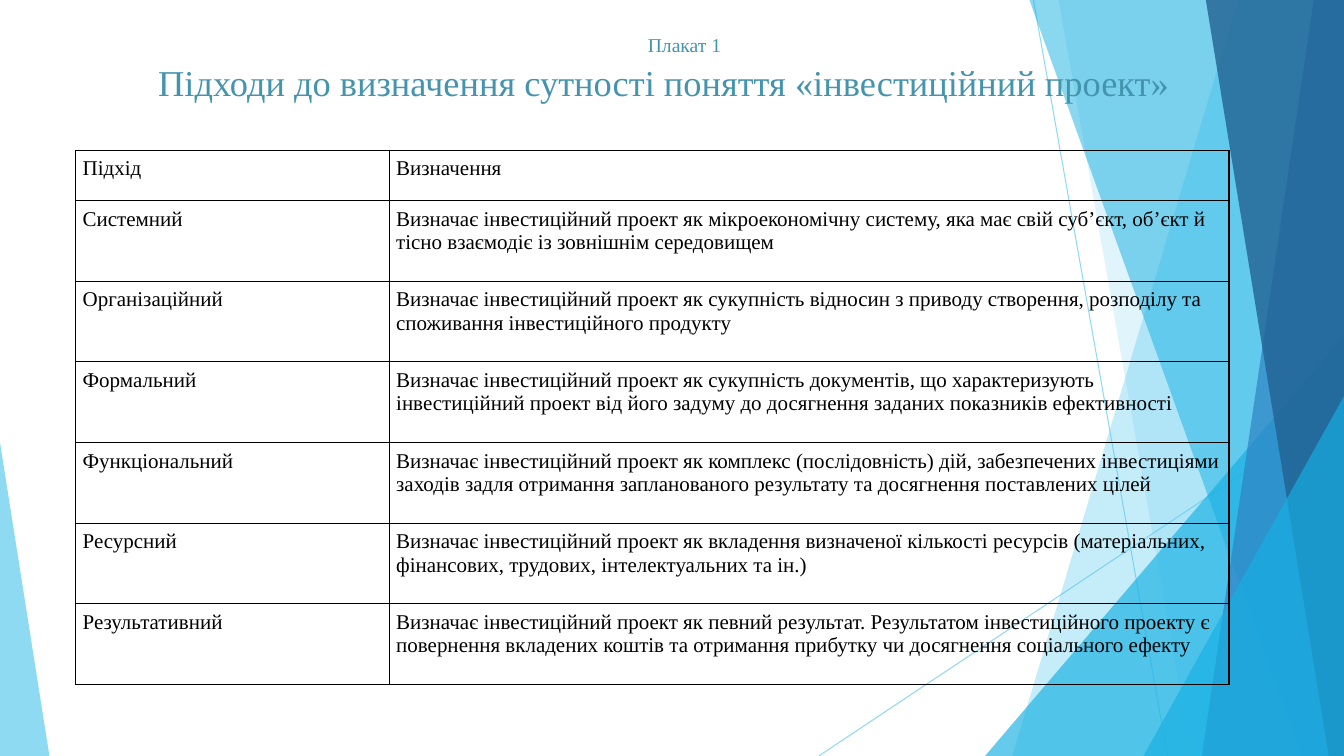
from dataclasses import dataclass

from lxml import etree
from pptx import Presentation
from pptx import util as u
from pptx.dml.color import RGBColor
from pptx.enum import shapes as kinds, text
from pptx.oxml.ns import qn

PX = 9144  # EMU in one px, 100 px to the inch
WIDTH, HEIGHT = 1333, 750
FONT = "Times New Roman"

BLACK = RGBColor(0x00, 0x00, 0x00)
TEAL = RGBColor(0x45, 0x94, 0xAE)
SKY = RGBColor(0x5F, 0xCB, 0xEF)
CYAN = RGBColor(0x16, 0xB0, 0xE3)
BLUE = RGBColor(0x2E, 0x83, 0xC3)
NAVY = RGBColor(0x22, 0x62, 0x92)


@dataclass(frozen=True)
class Ray:
    start: tuple[int, int]
    end: tuple[int, int]


@dataclass(frozen=True)
class Band:
    """Strip from a slanted left edge to the right edge of the slide."""
    top_x: int
    bottom_x: int
    color: RGBColor
    opacity: int


@dataclass(frozen=True)
class Corner:
    """Right triangle standing on the bottom edge of the slide."""
    left: int
    top: int
    right: int
    apex: int
    color: RGBColor
    opacity: int


@dataclass(frozen=True)
class Approach:
    name: str
    definition: str


RAYS = [Ray((1025, 0), (1158, HEIGHT)), Ray((WIDTH, 403), (812, HEIGHT))]

FACETS = [
    Band(1228, 1004, SKY, 36),
    Band(1050, 1182, SKY, 20),
    Corner(977, 333, WIDTH, 1, CYAN, 66),
    Band(1021, 1291, CYAN, 50),
    Band(1303, 1192, BLUE, 70),
    Band(1196, 1318, NAVY, 80),
    Corner(1134, 393, WIDTH, 1, CYAN, 66),
    Corner(0, 439, 49, 0, SKY, 70),
]

APPROACHES = [
    Approach("Підхід", "Визначення"),
    Approach("Системний", "Визначає інвестиційний проект як мікроекономічну систему, яка має "
             "свій суб’єкт, об’єкт й тісно взаємодіє із зовнішнім середовищем"),
    Approach("Організаційний", "Визначає інвестиційний проект як сукупність відносин з приводу "
             "створення, розподілу та споживання інвестиційного продукту"),
    Approach("Формальний", "Визначає інвестиційний проект як сукупність документів, що "
             "характеризують інвестиційний проект від його задуму до досягнення заданих "
             "показників ефективності"),
    Approach("Функціональний", "Визначає інвестиційний проект як комплекс (послідовність) дій, "
             "забезпечених інвестиціями заходів задля отримання запланованого результату та "
             "досягнення поставлених цілей"),
    Approach("Ресурсний", "Визначає інвестиційний проект як вкладення визначеної кількості "
             "ресурсів (матеріальних, фінансових, трудових, інтелектуальних та ін.)"),
    Approach("Результативний", "Визначає інвестиційний проект як певний результат. Результатом "
             "інвестиційного проекту є повернення вкладених коштів та отримання прибутку чи "
             "досягнення соціального ефекту"),
]


def px(length: int) -> u.Emu:
    return u.Emu(length * PX)


def set_opacity(shape, percent: int) -> None:
    for color in shape._element.spPr.iter(qn("a:srgbClr")):
        etree.SubElement(color, qn("a:alpha"), val=str(percent * 1000))


def draw_ray(slide, ray: Ray) -> None:
    line = slide.shapes.add_connector(
        kinds.MSO_CONNECTOR.STRAIGHT, *map(px, ray.start + ray.end))
    line.line.color.rgb = SKY
    line.line.width = u.Pt(0.75)
    set_opacity(line, 70)
    etree.SubElement(line._element.spPr, qn("a:effectLst"))


def draw_facet(slide, facet: Band | Corner) -> None:
    if isinstance(facet, Band):
        outline = slide.shapes.build_freeform(facet.top_x, 0, scale=PX)
        outline.add_line_segments(
            [(WIDTH, 0), (WIDTH, HEIGHT), (facet.bottom_x, HEIGHT)], close=True)
        shape = outline.convert_to_shape()
    else:
        shape = slide.shapes.add_shape(
            kinds.MSO_SHAPE.ISOSCELES_TRIANGLE, px(facet.left), px(facet.top),
            px(facet.right - facet.left), px(HEIGHT - facet.top))
        shape.adjustments[0] = facet.apex
    shape.shadow.inherit = False
    shape.fill.solid()
    shape.fill.fore_color.rgb = facet.color
    shape.line.fill.background()
    set_opacity(shape, facet.opacity)


def write_title(slide) -> None:
    title = slide.shapes.title
    slide.shapes._spTree.append(title._element)  # bring above the facets
    title.left, title.top, title.width, title.height = map(px, (109, 27, 1090, 82))
    frame = title.text_frame
    frame.text = "Плакат 1\nПідходи до визначення сутності поняття «інвестиційний проект»"
    frame.word_wrap = True
    frame.auto_size = text.MSO_AUTO_SIZE.NONE
    frame.vertical_anchor = text.MSO_ANCHOR.MIDDLE
    for paragraph, size, indent in zip(frame.paragraphs, (14, 26), (50, 10)):
        paragraph.alignment = text.PP_ALIGN.CENTER
        paragraph.font.name = FONT
        paragraph.font.size = u.Pt(size)
        paragraph.font.color.rgb = TEAL
        paragraph._p.get_or_add_pPr().set("indent", str(px(indent)))
    frame.paragraphs[1].space_before = u.Pt(3)


def add_borders(cell) -> None:
    properties = cell._tc.get_or_add_tcPr()
    for place, side in enumerate(("a:lnL", "a:lnR", "a:lnT", "a:lnB")):
        border = etree.Element(qn(side), w=str(u.Pt(1)))
        fill = etree.SubElement(border, qn("a:solidFill"))
        etree.SubElement(fill, qn("a:srgbClr"), val=str(BLACK))
        properties.insert(place, border)


def write_cell(cell, words: str) -> None:
    cell.text = words
    cell.fill.background()
    cell.margin_left = cell.margin_right = cell.margin_top = cell.margin_bottom = px(7)
    paragraph = cell.text_frame.paragraphs[0]
    paragraph.font.name = FONT
    paragraph.font.size = u.Pt(15)
    paragraph.font.color.rgb = BLACK
    add_borders(cell)


def draw_approaches(slide) -> None:
    widths = (311, 833)
    heights = [50] + [80] * (len(APPROACHES) - 1)
    table = slide.shapes.add_table(
        len(heights), len(widths), px(75), px(149), px(sum(widths)), px(sum(heights))).table
    table.first_row = table.horz_banding = False
    for column, width in zip(table.columns, widths):
        column.width = px(width)
    for row, height, approach in zip(table.rows, heights, APPROACHES):
        row.height = px(height)
        for cell, words in zip(row.cells, (approach.name, approach.definition)):
            write_cell(cell, words)


def main() -> None:
    deck = Presentation()
    deck.slide_width, deck.slide_height = px(WIDTH), px(HEIGHT)
    slide = deck.slides.add_slide(deck.slide_layouts.get_by_name("Title Only"))
    for ray in RAYS:
        draw_ray(slide, ray)
    for facet in FACETS:
        draw_facet(slide, facet)
    write_title(slide)
    draw_approaches(slide)
    deck.save("out.pptx")


if __name__ == "__main__":
    main()
